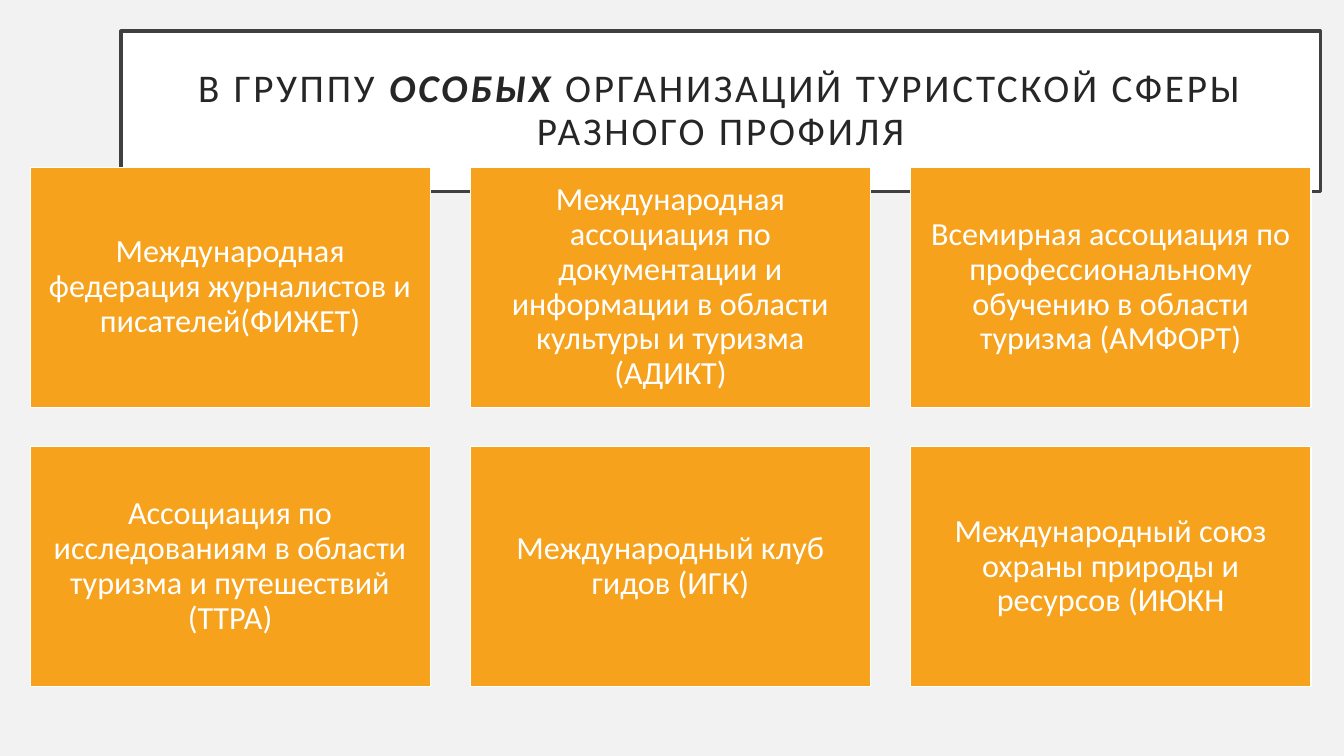
import dataclasses

import pptx
import pptx.dml.color
import pptx.enum.shapes
import pptx.enum.text
import pptx.util

Pt = pptx.util.Pt


@dataclasses.dataclass(frozen=True)
class Theme:
    font: str = "Calibri"
    background: str = "F2F2F2"
    title_fill: str = "FFFFFF"
    title_line: str = "404040"
    title_text: str = "262626"
    card_fill: str = "F6A21D"
    card_line: str = "FFFFFF"
    card_text: str = "FFFFFF"
    title_size: float = 28
    card_size: float = 23


THEME = Theme()

TITLE = [
    ("В ГРУППУ ", False),
    ("ОСОБЫХ ", True),
    ("ОРГАНИЗАЦИЙ ТУРИСТСКОЙ СФЕРЫ РАЗНОГО ПРОФИЛЯ", False),
]

ORGANIZATIONS = [
    "Международная федерация журналистов и писателей(ФИЖЕТ)",
    "Международная ассоциация по документации и информации в области культуры и туризма (АДИКТ)",
    "Всемирная ассоциация по профессиональному обучению в области туризма (АМФОРТ)",
    "Ассоциация по исследованиям в области туризма и путешествий (ТТРА)",
    "Международный клуб гидов (ИГК)",
    "Международный союз охраны природы и ресурсов (ИЮКН",
]

COLUMNS = 3
CARD_LEFT, CARD_TOP = 21.6, 119.5
CARD_WIDTH, CARD_HEIGHT = 285.8, 171.5
COLUMN_STEP, ROW_STEP = 314.5, 199.5


def rgb(value):
    return pptx.dml.color.RGBColor.from_string(value)


def add_box(slide, left, top, width, height, fill, line, line_width, inset):
    sp = slide.shapes.add_shape(
        pptx.enum.shapes.MSO_SHAPE.RECTANGLE, Pt(left), Pt(top), Pt(width), Pt(height)
    )
    sp.shadow.inherit = False
    sp.fill.solid()
    sp.fill.fore_color.rgb = rgb(fill)
    sp.line.color.rgb = rgb(line)
    sp.line.width = Pt(line_width)
    tf = sp.text_frame
    tf.word_wrap = True
    tf.vertical_anchor = pptx.enum.text.MSO_ANCHOR.MIDDLE
    tf.margin_left = tf.margin_right = tf.margin_top = tf.margin_bottom = Pt(inset)
    p = tf.paragraphs[0]
    p.alignment = pptx.enum.text.PP_ALIGN.CENTER
    p.line_spacing = 0.9
    return p


def add_run(p, text, size, color):
    r = p.add_run()
    r.text = text
    r.font.name = THEME.font
    r.font.size = Pt(size)
    r.font.color.rgb = rgb(color)
    return r


def add_title(slide):
    p = add_box(
        slide, 86.4, 22.3, 856.8, 114.5, THEME.title_fill, THEME.title_line, 2.5, 14.4
    )
    for text, emphasized in TITLE:
        r = add_run(p, text, THEME.title_size, THEME.title_text)
        r.font.bold = r.font.italic = emphasized
        r.font._element.set("spc", "200")


def add_card(slide, index, text):
    row, column = divmod(index, COLUMNS)
    left = CARD_LEFT + column * COLUMN_STEP
    top = CARD_TOP + row * ROW_STEP
    p = add_box(
        slide, left, top, CARD_WIDTH, CARD_HEIGHT, THEME.card_fill, THEME.card_line, 1, 7
    )
    add_run(p, text, THEME.card_size, THEME.card_text)


def main():
    prs = pptx.Presentation()
    prs.slide_width, prs.slide_height = Pt(960), Pt(540)
    slide = prs.slides.add_slide(prs.slide_layouts[6])
    slide.background.fill.solid()
    slide.background.fill.fore_color.rgb = rgb(THEME.background)
    add_title(slide)
    for index, text in enumerate(ORGANIZATIONS):
        add_card(slide, index, text)
    prs.save("out.pptx")


if __name__ == "__main__":
    main()
